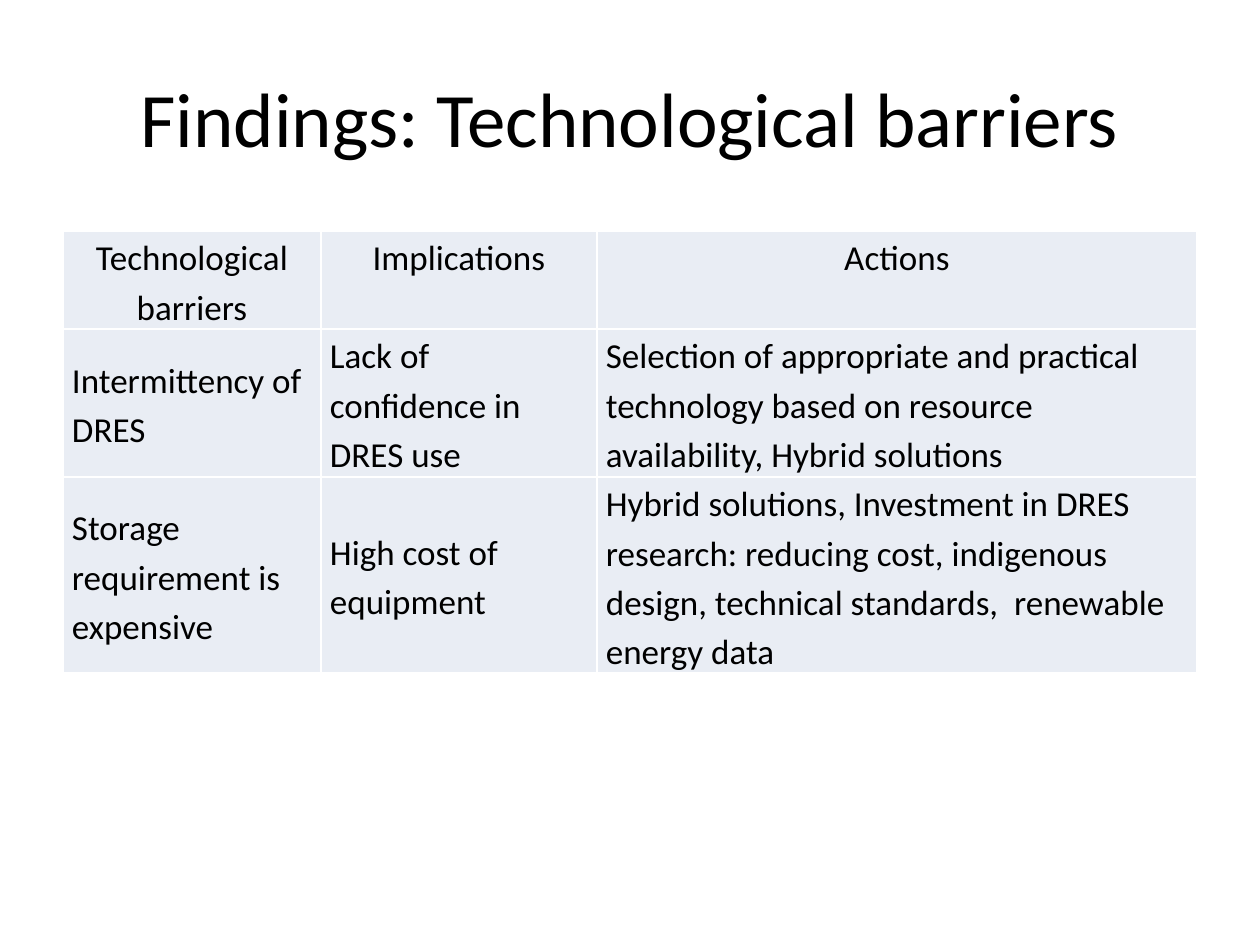
from dataclasses import dataclass

from lxml.etree import SubElement as Sub
from pptx import Presentation
from pptx.dml.color import RGBColor as Rgb
from pptx.enum.text import MSO_ANCHOR as Anchor, PP_ALIGN as Align
from pptx.oxml.ns import qn
from pptx.util import Emu, Pt


@dataclass(frozen=True)
class Theme:
    font: str = "Calibri"
    ink: str = "000000"
    cell: str = "E9EDF4"
    rule: str = "FFFFFF"
    title: int = 44
    body: int = 20
    line: int = 1
    lead: float = 1.15


THEME = Theme()
SCALE = 914400 / 126
COLS = (258, 276, 600)
ROWS = (98, 148, 196)
DATA = (
    ("Technological barriers", "Implications", "Actions"),
    (
        "Intermittency of DRES",
        "Lack of confidence in DRES use",
        "Selection of appropriate and practical technology based on "
        "resource availability, Hybrid solutions",
    ),
    (
        "Storage requirement is expensive",
        "High cost of equipment",
        "Hybrid solutions, Investment in DRES research: reducing cost, "
        "indigenous design, technical standards,  renewable energy data",
    ),
)


def px(num):
    return Emu(round(num * SCALE))


def add_run(para, text, size):
    run = para.add_run()
    run.text = text
    font = run.font
    font.name = THEME.font
    font.size = Pt(size)
    font.bold = False
    font.color.rgb = Rgb.from_string(THEME.ink)


def add_title(slide, text, box):
    frame = slide.shapes.add_textbox(*map(px, box)).text_frame
    frame.word_wrap = True
    frame.vertical_anchor = Anchor.MIDDLE
    para = frame.paragraphs[0]
    para.alignment = Align.CENTER
    add_run(para, text, THEME.title)


def add_rules(cell):
    props = cell._tc.get_or_add_tcPr()
    for side in ("lnL", "lnR", "lnT", "lnB"):
        line = Sub(props, qn(f"a:{side}"), w=str(Pt(THEME.line)))
        fill = Sub(line, qn("a:solidFill"))
        Sub(fill, qn("a:srgbClr"), val=THEME.rule)


def fill_cell(cell, text, head):
    add_rules(cell)
    cell.fill.solid()
    cell.fill.fore_color.rgb = Rgb.from_string(THEME.cell)
    cell.margin_left = cell.margin_right = px(9)
    cell.margin_top = cell.margin_bottom = 0
    cell.vertical_anchor = Anchor.TOP if head else Anchor.MIDDLE
    para = cell.text_frame.paragraphs[0]
    para.alignment = Align.CENTER if head else Align.LEFT
    para.line_spacing = THEME.lead
    add_run(para, text, THEME.body)


def add_grid(slide, left, top):
    box = (left, top, sum(COLS), sum(ROWS))
    table = slide.shapes.add_table(len(ROWS), len(COLS), *map(px, box)).table
    table.first_row = table.horz_banding = False
    for col, width in zip(table.columns, COLS):
        col.width = px(width)
    for row, height in zip(table.rows, ROWS):
        row.height = px(height)
    for r, texts in enumerate(DATA):
        for c, text in enumerate(texts):
            fill_cell(table.cell(r, c), text, r == 0)


def main():
    deck = Presentation()
    deck.slide_width, deck.slide_height = px(1260), px(945)
    slide = deck.slides.add_slide(deck.slide_layouts[6])
    add_title(slide, "Findings: Technological barriers", (63, 38, 1134, 158))
    add_grid(slide, 63, 231)
    deck.save("out.pptx")


if __name__ == "__main__":
    main()
